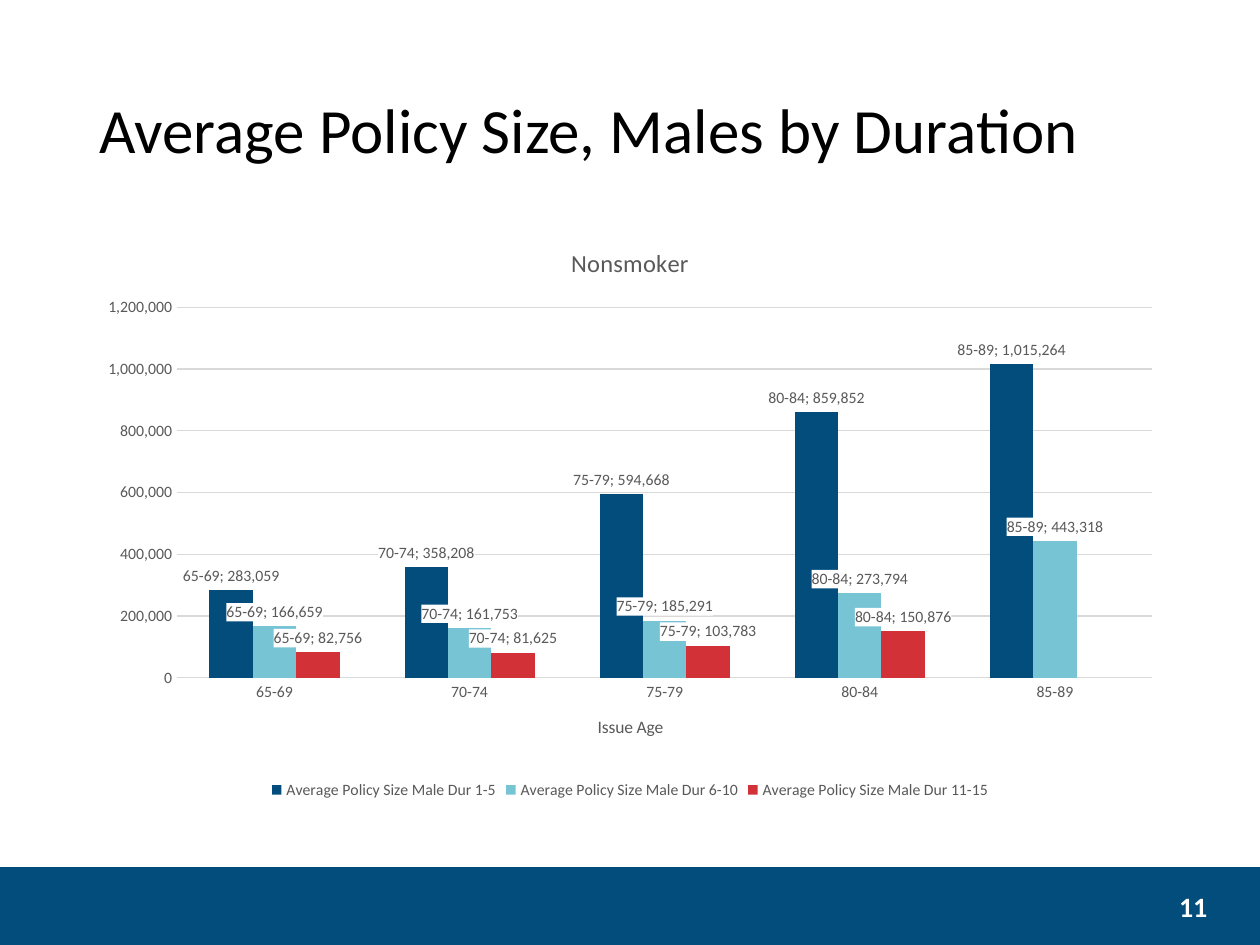
from lxml.etree import SubElement
from pptx import Presentation
from pptx.chart.data import CategoryChartData
from pptx.dml.color import RGBColor
from pptx.enum.chart import XL_CHART_TYPE, XL_LABEL_POSITION, XL_LEGEND_POSITION, XL_TICK_MARK
from pptx.enum.shapes import MSO_SHAPE
from pptx.enum.text import MSO_ANCHOR, PP_ALIGN
from pptx.oxml import parse_xml
from pptx.oxml.ns import nsdecls, qn
from pptx.util import Cm, Pt

COLORS = {
    "navy": "024D7C",
    "sky": "77C4D5",
    "red": "D23138",
    "gray": "595959",
    "grid": "D9D9D9",
    "black": "000000",
    "white": "FFFFFF",
}
AGES = ["65-69", "70-74", "75-79", "80-84", "85-89"]
DURATIONS = [
    ("1-5", "navy", [283059, 358208, 594668, 859852, 1015264]),
    ("6-10", "sky", [166659, 161753, 185291, 273794, 443318]),
    ("11-15", "red", [82756, 81625, 103783, 150876, None]),
]
PLOT_AREA = {"x": 0.083, "y": 0.145, "w": 0.898, "h": 0.638}
NUMBER_FORMAT = "#,##0"


def rgb(name):
    """Return the named palette colour."""
    return RGBColor.from_string(COLORS[name])


def style_font(font, size, color, bold=False):
    """Set face, size, colour and weight."""
    font.name = "Calibri"
    font.size = Pt(size)
    font.bold = bold
    font.color.rgb = rgb(color)


def add_text(slide, text, box, size, color, align=PP_ALIGN.LEFT, bold=False):
    """Add one vertically centred line of text."""
    frame = slide.shapes.add_textbox(*map(Cm, box)).text_frame
    frame.word_wrap = True
    frame.vertical_anchor = MSO_ANCHOR.MIDDLE
    frame.text = text
    line = frame.paragraphs[0]
    line.alignment = align
    line.line_spacing = 0.9
    style_font(line.runs[0].font, size, color, bold)


def add_footer_band(slide):
    """Add the coloured band along the bottom."""
    band = slide.shapes.add_shape(MSO_SHAPE.RECTANGLE, Cm(0), Cm(17.48), Cm(25.4), Cm(1.65))
    band.shadow.inherit = False
    band.fill.solid()
    band.fill.fore_color.rgb = rgb("navy")
    band.line.fill.background()


def set_title(owner, text, size):
    """Give a chart or an axis its title."""
    frame = (owner.chart_title if hasattr(owner, "chart_title") else owner.axis_title).text_frame
    frame.text = text
    style_font(frame.paragraphs[0].runs[0].font, size, "gray")


def style_axes(chart):
    """Format both axes and the gridlines."""
    ages, sizes = chart.category_axis, chart.value_axis
    for axis in (ages, sizes):
        axis.major_tick_mark = axis.minor_tick_mark = XL_TICK_MARK.NONE
        style_font(axis.tick_labels.font, 9, "gray")
    sizes.minimum_scale, sizes.maximum_scale, sizes.major_unit = 0, 1200000, 200000
    sizes.tick_labels.number_format = NUMBER_FORMAT
    sizes.tick_labels.number_format_is_linked = False
    sizes.format.line.fill.background()
    for line in (ages.format.line, sizes.major_gridlines.format.line):
        line.color.rgb = rgb("grid")
        line.width = Pt(0.75)
    set_title(ages, "Issue Age", 10)


def style_series(series, color):
    """Colour the bars and put white-backed labels above them."""
    series.invert_if_negative = False
    series.format.fill.solid()
    series.format.fill.fore_color.rgb = rgb(color)
    labels = series.data_labels
    labels.show_value = labels.show_category_name = True
    labels.position = XL_LABEL_POSITION.OUTSIDE_END
    labels.number_format = NUMBER_FORMAT
    labels.number_format_is_linked = False
    style_font(labels.font, 9, "gray")
    element = series._element.find(qn("c:dLbls"))
    element.find(qn("c:txPr")).addprevious(parse_xml(
        f'<c:spPr {nsdecls("c", "a")}><a:solidFill><a:srgbClr val="{COLORS["white"]}"/>'
        '</a:solidFill><a:ln><a:noFill/></a:ln></c:spPr>'))
    separator = parse_xml(f'<c:separator {nsdecls("c")}>; </c:separator>')
    element.find(qn("c:showBubbleSize")).addnext(separator)


def place_plot(chart):
    """Fix the inner plot area as fractions of the chart."""
    plot_area = chart._chartSpace.chart.plotArea
    for old in plot_area.findall(qn("c:layout")):
        plot_area.remove(old)
    layout = parse_xml(f'<c:layout {nsdecls("c")}/>')
    plot_area.insert(0, layout)
    manual = SubElement(layout, qn("c:manualLayout"))
    settings = {"layoutTarget": "inner", "xMode": "edge", "yMode": "edge", **PLOT_AREA}
    for tag, value in settings.items():
        SubElement(manual, qn(f"c:{tag}")).set("val", str(value))


def add_policy_chart(slide):
    """Add the clustered columns of policy size by issue age."""
    data = CategoryChartData(number_format=NUMBER_FORMAT)
    data.categories = AGES
    for duration, _, values in DURATIONS:
        data.add_series(f"Average Policy Size Male Dur {duration}", values)
    chart = slide.shapes.add_chart(
        XL_CHART_TYPE.COLUMN_CLUSTERED, Cm(1.75), Cm(4.5), Cm(21.9), Cm(11.71), data).chart
    style_font(chart.font, 10, "black")
    set_title(chart, "Nonsmoker", 14)
    chart.has_legend = True
    chart.legend.position = XL_LEGEND_POSITION.BOTTOM
    chart.legend.include_in_layout = False
    style_font(chart.legend.font, 9, "gray")
    plot = chart.plots[0]
    plot.vary_by_categories = False
    plot.gap_width = 150
    plot.overlap = 0
    for series, (_, color, _) in zip(plot.series, DURATIONS):
        style_series(series, color)
    style_axes(chart)
    place_plot(chart)


def main():
    """Build and save the slide."""
    deck = Presentation()
    deck.slide_width, deck.slide_height = Cm(25.4), Cm(19.05)
    slide = deck.slides.add_slide(deck.slide_layouts[6])
    add_footer_band(slide)
    add_text(slide, "Average Policy Size, Males by Duration",
             (1.75, 0.91, 21.9, 3.56), 36, "black")
    add_text(slide, "11", (23.24, 18.03, 1.35, 0.56), 16, "white", PP_ALIGN.RIGHT, True)
    add_policy_chart(slide)
    deck.save("out.pptx")


if __name__ == "__main__":
    main()
